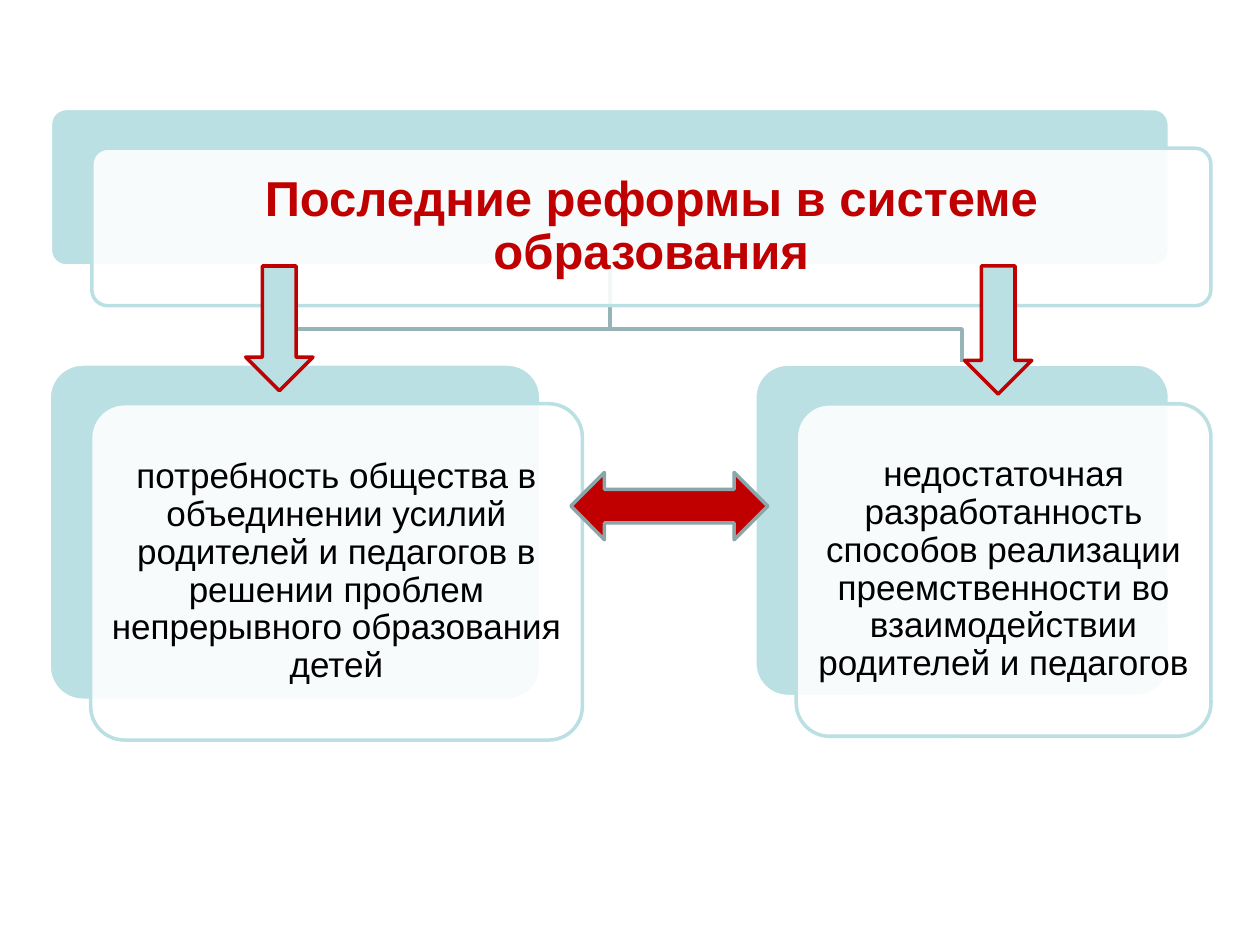
"""Build a slide linking education reforms to two related causes."""
from lxml.etree import SubElement
from pptx import Presentation
from pptx.dml.color import RGBColor
from pptx.enum.shapes import MSO_SHAPE
from pptx.enum.text import MSO_ANCHOR, PP_ALIGN
from pptx.oxml.ns import qn
from pptx.util import Pt

TEAL, RED, WHITE, BLACK = "BBE0E3", "C00000", "FFFFFF", "000000"
BRANCH, EDGE = "96B3B6", "8AA6A8"
SHIFT_X, SHIFT_Y = 23.7, 22.7
LINE_WIDTH = 2

CARDS = [
    {"text": "Последние реформы в системе образования", "box": (28.8, 62, 639.4, 90),
     "size": 28, "color": RED, "bold": True, "pad": 2.7, "inset": 8.4},
    {"text": "потребность общества в объединении усилий родителей и педагогов "
             "в решении проблем непрерывного образования детей",
     "box": (28.1, 208, 281, 192.2),
     "size": 20, "color": BLACK, "bold": False, "pad": 5.6, "inset": 6},
    {"text": "недостаточная разработанность способов реализации преемственности "
             "во взаимодействии родителей и педагогов",
     "box": (431.3, 208, 237, 190),
     "size": 20, "color": BLACK, "bold": False, "pad": 5.6, "inset": 6},
]
ARROWS = [
    (MSO_SHAPE.DOWN_ARROW, (140.4, 152, 38.4, 71.3), TEAL, RED),
    (MSO_SHAPE.DOWN_ARROW, (551.2, 152, 38.4, 73.2), TEAL, RED),
    (MSO_SHAPE.LEFT_RIGHT_ARROW, (326.2, 270, 112.5, 38.4), RED, EDGE),
]
BUS_Y = 188


def rgb(color):
    return RGBColor.from_string(color)


def add_shape(s, kind, box, fill, line):
    sp = s.shapes.add_shape(kind, *map(Pt, box))
    sp.shadow.inherit = False
    sp.fill.solid()
    sp.fill.fore_color.rgb = rgb(fill)
    sp.line.color.rgb = rgb(line)
    sp.line.width = Pt(LINE_WIDTH)
    return sp


def add_branch(s, parent, child):
    x, y, w, h = parent["box"]
    left, top, width, _ = child["box"]
    start, end = x + w / 2, left + width / 2
    builder = s.shapes.build_freeform(Pt(start), Pt(y + h))
    points = [(start, BUS_Y), (end, BUS_Y), (end, top)]
    builder.add_line_segments([(Pt(px), Pt(py)) for px, py in points], close=False)
    sp = builder.convert_to_shape()
    sp.shadow.inherit = False
    sp.fill.background()
    sp.line.color.rgb = rgb(BRANCH)
    sp.line.width = Pt(LINE_WIDTH)


def add_text(s, card, box):
    pad = card["pad"]
    x, y, w, h = box
    sp = s.shapes.add_textbox(Pt(x + pad), Pt(y + pad), Pt(w - 2 * pad), Pt(h - 2 * pad))
    tf = sp.text_frame
    tf.word_wrap = True
    tf.vertical_anchor = MSO_ANCHOR.MIDDLE
    tf.margin_left = tf.margin_right = tf.margin_top = tf.margin_bottom = Pt(card["inset"])
    p = tf.paragraphs[0]
    p.alignment = PP_ALIGN.CENTER
    p.line_spacing = 0.9
    r = p.add_run()
    r.text = card["text"]
    r.font.name = "Arial"
    r.font.size = Pt(card["size"])
    r.font.bold = card["bold"]
    r.font.color.rgb = rgb(card["color"])


def add_card(s, card):
    x, y, w, h = card["box"]
    front_box = (x + SHIFT_X, y + SHIFT_Y, w, h)
    back = add_shape(s, MSO_SHAPE.ROUNDED_RECTANGLE, card["box"], TEAL, WHITE)
    front = add_shape(s, MSO_SHAPE.ROUNDED_RECTANGLE, front_box, WHITE, TEAL)
    for sp in (back, front):
        sp.adjustments[0] = 0.1
    color = front.fill._xPr.find(qn("a:solidFill"))[0]
    SubElement(color, qn("a:alpha"), val="90000")
    add_text(s, card, front_box)


def main():
    prs = Presentation()
    prs.slide_width, prs.slide_height = Pt(720), Pt(540)
    s = prs.slides.add_slide(prs.slide_layouts[6])
    header, *causes = CARDS
    for cause in reversed(causes):
        add_branch(s, header, cause)
    for card in CARDS:
        add_card(s, card)
    for arrow in ARROWS:
        add_shape(s, *arrow)
    prs.save("out.pptx")


if __name__ == "__main__":
    main()
